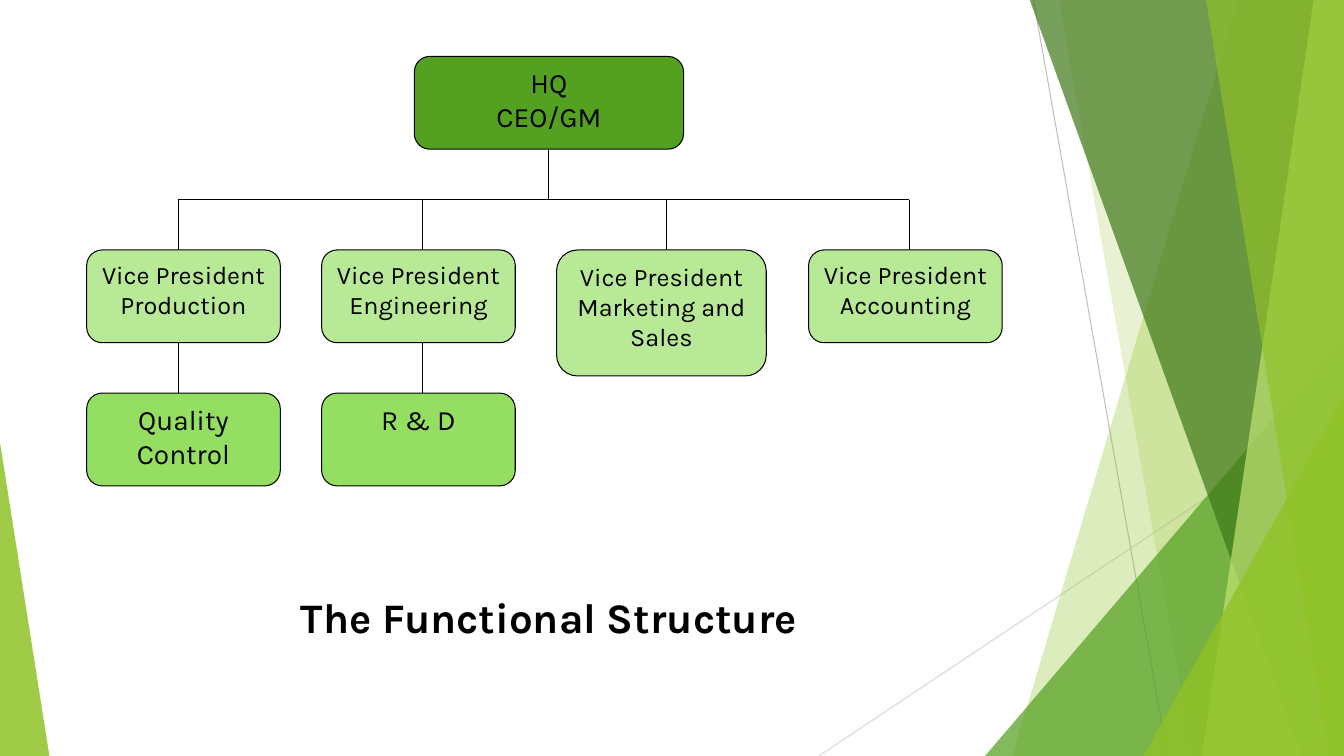
from dataclasses import dataclass

from lxml.etree import SubElement
from pptx import Presentation
from pptx.dml.color import RGBColor
from pptx.enum.shapes import MSO_CONNECTOR, MSO_SHAPE
from pptx.enum.text import MSO_ANCHOR, PP_ALIGN
from pptx.oxml.ns import qn
from pptx.shapes.autoshape import Shape
from pptx.shapes.connector import Connector
from pptx.slide import Slide
from pptx.text.text import TextFrame
from pptx.util import Inches, Pt

BLACK = RGBColor(0x00, 0x00, 0x00)
GRAY = RGBColor(0xBF, 0xBF, 0xBF)
LIGHT_GRAY = RGBColor(0xD9, 0xD9, 0xD9)
LIME = RGBColor(0x90, 0xC2, 0x26)
PALE_LIME = RGBColor(0xC0, 0xE4, 0x74)
GREEN = RGBColor(0x54, 0xA0, 0x21)
DARK_GREEN = RGBColor(0x3F, 0x78, 0x19)
PALE_GREEN = RGBColor(0xB7, 0xE9, 0x96)
LIGHT_GREEN = RGBColor(0x94, 0xDE, 0x61)

SLIDE_WIDTH, SLIDE_HEIGHT = 13.33, 7.5
BAND_TOP = -0.01
BOX_WIDTH, BOX_HEIGHT = 1.92, 0.92
HEAD_TOP, VICE_TOP, UNIT_TOP = 0.56, 2.48, 3.9
HEAD_BOTTOM, VICE_BOTTOM, BUS_TOP = 1.48, 3.4, 1.98
HEAD_CENTER = 5.44
BRANCHES = (1.77, 4.19, 6.61, 9.02)
UNIT_BRANCHES = BRANCHES[:2]


@dataclass(frozen=True)
class Band:
    top_left: float
    bottom_left: float
    color: RGBColor
    opacity: int


@dataclass(frozen=True)
class Wedge:
    left: float
    top: float
    width: float
    apex: float
    color: RGBColor
    opacity: int


@dataclass(frozen=True)
class OrgBox:
    lines: tuple[str, ...]
    left: float
    top: float
    color: RGBColor
    size: int
    width: float = BOX_WIDTH
    height: float = BOX_HEIGHT


BACK_BANDS = (
    Band(12.28, 10.04, LIME, 30),
    Band(10.5, 11.83, LIME, 20),
)
MIDDLE_WEDGE = Wedge(9.77, 3.33, 3.56, 1, GREEN, 72)
FRONT_BANDS = (
    Band(10.21, 12.91, DARK_GREEN, 70),
    Band(13.03, 11.92, PALE_LIME, 70),
    Band(11.96, 13.18, LIME, 65),
)
FRONT_WEDGES = (
    Wedge(11.34, 3.93, 1.99, 1, LIME, 80),
    Wedge(0, 4.39, 0.49, 0, LIME, 85),
)
HEAD_BOX = OrgBox(("HQ", "CEO/GM"), 4.11, HEAD_TOP, GREEN, 20, width=2.67)
STAFF_BOXES = (
    OrgBox(("Vice President Production",), 0.86, VICE_TOP, PALE_GREEN, 18),
    OrgBox(("Vice President", "Engineering"), 3.19, VICE_TOP, PALE_GREEN, 18),
    OrgBox(("Vice President Marketing and Sales",), 5.52, VICE_TOP, PALE_GREEN, 18,
           width=2.08, height=1.25),
    OrgBox(("Vice President", "Accounting"), 8.02, VICE_TOP, PALE_GREEN, 18),
    OrgBox(("Quality Control",), 0.86, UNIT_TOP, LIGHT_GREEN, 20),
    OrgBox(("R & D",), 3.19, UNIT_TOP, LIGHT_GREEN, 20),
)


def fill_translucent(shape: Shape, color: RGBColor, opacity: int) -> None:
    shape.shadow.inherit = False
    shape.fill.solid()
    shape.fill.fore_color.rgb = color
    color_element = shape.element.spPr.find(f"{qn('a:solidFill')}/{qn('a:srgbClr')}")
    SubElement(color_element, qn("a:alpha"), val=str(opacity * 1000))
    shape.line.fill.background()


def draw_band(page: Slide, band: Band) -> None:
    builder = page.shapes.build_freeform(Inches(band.top_left), Inches(BAND_TOP))
    corners = (
        (SLIDE_WIDTH, BAND_TOP),
        (SLIDE_WIDTH, SLIDE_HEIGHT),
        (band.bottom_left, SLIDE_HEIGHT),
    )
    builder.add_line_segments([(Inches(x), Inches(y)) for x, y in corners], close=True)
    fill_translucent(builder.convert_to_shape(), band.color, band.opacity)


def draw_wedge(page: Slide, wedge: Wedge) -> None:
    shape = page.shapes.add_shape(
        MSO_SHAPE.ISOSCELES_TRIANGLE, Inches(wedge.left), Inches(wedge.top),
        Inches(wedge.width), Inches(SLIDE_HEIGHT - wedge.top))
    shape.adjustments[0] = wedge.apex
    fill_translucent(shape, wedge.color, wedge.opacity)


def draw_line(page: Slide, x1: float, y1: float, x2: float, y2: float,
              color: RGBColor = BLACK) -> Connector:
    line = page.shapes.add_connector(
        MSO_CONNECTOR.STRAIGHT, Inches(x1), Inches(y1), Inches(x2), Inches(y2))
    line.line.color.rgb = color
    line.line.width = Pt(0.75)
    SubElement(line._element.spPr, qn("a:effectLst"))
    return line


def write_lines(frame: TextFrame, lines: tuple[str, ...], size: int, bold: bool = False) -> None:
    frame.word_wrap = True
    frame.vertical_anchor = MSO_ANCHOR.TOP
    font_format = {"name": "Karla", "size": Pt(size), "bold": bold}
    for index, text in enumerate(lines):
        para = frame.add_paragraph() if index else frame.paragraphs[0]
        para.alignment = PP_ALIGN.CENTER
        span = para.add_run()
        span.text = text
        for name, value in font_format.items():
            setattr(span.font, name, value)
        span.font.color.rgb = BLACK


def draw_box(page: Slide, box: OrgBox) -> Shape:
    shape = page.shapes.add_shape(
        MSO_SHAPE.ROUNDED_RECTANGLE, Inches(box.left), Inches(box.top),
        Inches(box.width), Inches(box.height))
    shape.shadow.inherit = False
    shape.fill.solid()
    shape.fill.fore_color.rgb = box.color
    shape.line.color.rgb = BLACK
    shape.line.width = Pt(0.75)
    write_lines(shape.text_frame, box.lines, box.size)
    return shape


def draw_backdrop(page: Slide) -> None:
    draw_line(page, 10.25, 0, 11.58, SLIDE_HEIGHT, GRAY)
    draw_line(page, SLIDE_WIDTH, 4.03, 8.12, SLIDE_HEIGHT, LIGHT_GRAY)
    for band in BACK_BANDS:
        draw_band(page, band)
    draw_wedge(page, MIDDLE_WEDGE)
    for band in FRONT_BANDS:
        draw_band(page, band)
    for wedge in FRONT_WEDGES:
        draw_wedge(page, wedge)


def draw_chart(page: Slide) -> None:
    head = draw_box(page, HEAD_BOX)
    for box in STAFF_BOXES:
        draw_box(page, box)
    trunk = draw_line(page, HEAD_CENTER, HEAD_BOTTOM, HEAD_CENTER, BUS_TOP)
    trunk.begin_connect(head, 2)
    trunk.end_x = trunk.begin_x
    draw_line(page, BRANCHES[0], BUS_TOP, BRANCHES[-1], BUS_TOP)
    for x in BRANCHES:
        draw_line(page, x, BUS_TOP, x, VICE_TOP)
    for x in UNIT_BRANCHES:
        draw_line(page, x, VICE_BOTTOM, x, UNIT_TOP)


def main() -> None:
    deck = Presentation()
    deck.slide_width = Inches(SLIDE_WIDTH)
    deck.slide_height = Inches(SLIDE_HEIGHT)
    page = deck.slides.add_slide(deck.slide_layouts[6])
    draw_backdrop(page)
    title = page.shapes.add_textbox(Inches(1.57), Inches(5.82), Inches(7.75), Inches(0.6))
    write_lines(title.text_frame, ("The Functional Structure",), 30, bold=True)
    draw_chart(page)
    deck.save("out.pptx")


if __name__ == "__main__":
    main()
